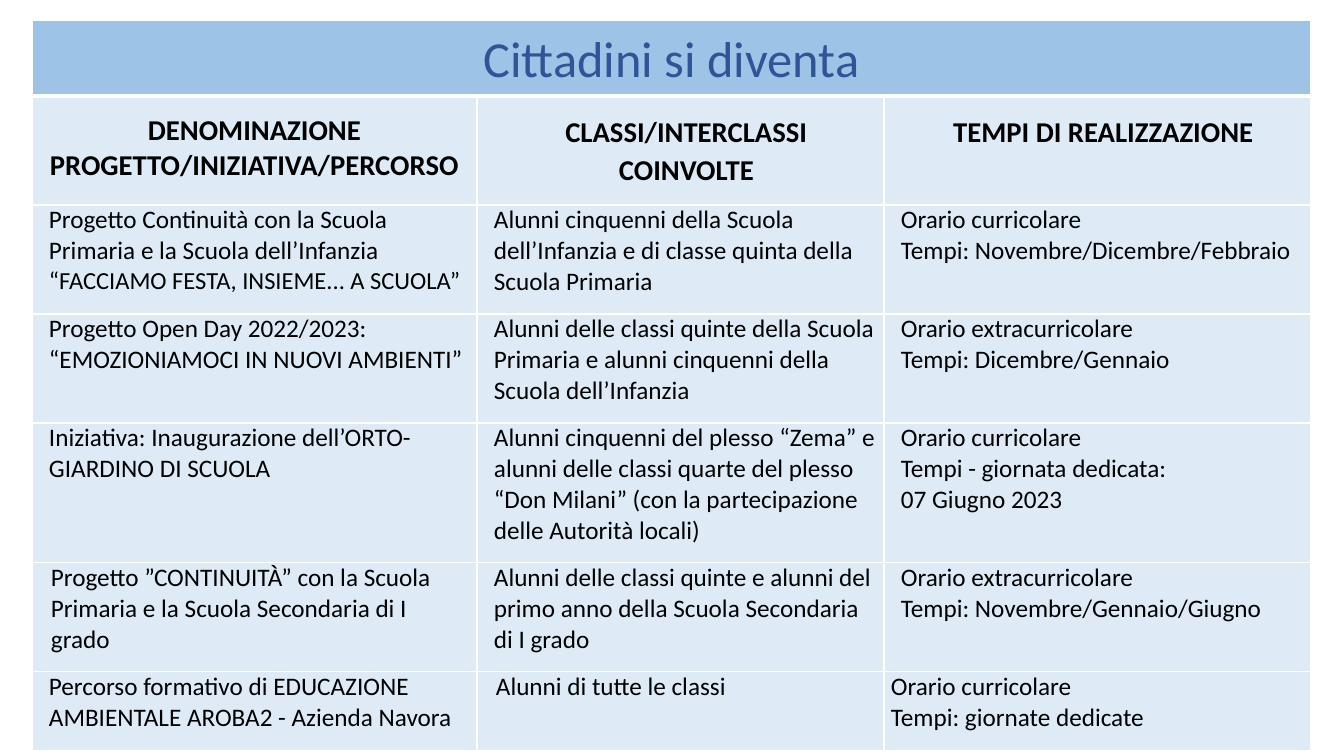
from dataclasses import dataclass
from typing import Any

from lxml import etree
from pptx import Presentation
from pptx.dml.color import RGBColor
from pptx.enum.text import MSO_ANCHOR, PP_ALIGN
from pptx.oxml.ns import qn
from pptx.util import Emu, Pt

CENTER = PP_ALIGN.CENTER
LEFT = PP_ALIGN.LEFT
TOP = MSO_ANCHOR.TOP
PX_PER_INCH = 100.8


@dataclass(frozen=True)
class Theme:
    font: str = "Calibri"
    title_fill: str = "9DC3E6"
    cell_fill: str = "DEEBF7"
    title_text: str = "2F5597"
    text: str = "000000"
    border: str = "FFFFFF"
    title_size: float = 36
    header_size: float = 20.5
    body_size: float = 18
    motto_size: float = 17.5
    border_width: float = 1
    title_rule: float = 3


THEME = Theme()


@dataclass(frozen=True)
class Span:
    text: str
    size: float = THEME.body_size
    bold: bool = False
    color: str = THEME.text


@dataclass(frozen=True)
class Para:
    spans: tuple[Span, ...]
    indent: int = 10
    align: Any = LEFT
    spacing: float = 1.0


@dataclass(frozen=True)
class CellText:
    paras: tuple[Para, ...]
    top: int = 0
    fill: str = THEME.cell_fill


def px(length: int) -> Emu:
    return Emu(round(length * 914400 / PX_PER_INCH))


def apply(target: Any, values: dict[str, Any]) -> None:
    for name, value in values.items():
        setattr(target, name, value)


def body(*lines: str, indent: int = 10) -> CellText:
    return CellText(tuple(Para((Span(line),), indent) for line in lines))


def header(*lines: str, indent: int = 12, spacing: float = 1.07) -> CellText:
    return CellText(
        tuple(
            Para((Span(line, THEME.header_size, True),), indent, CENTER, spacing)
            for line in lines
        ),
        top=17,
    )


def draw_borders(cell: Any, widths: dict[str, float]) -> None:
    properties = cell._tc.get_or_add_tcPr()
    for position, (side, width) in enumerate(widths.items()):
        line = etree.Element(qn(f"a:ln{side}"), w=str(Pt(width)))
        fill = etree.SubElement(line, qn("a:solidFill"))
        etree.SubElement(fill, qn("a:srgbClr"), val=THEME.border)
        properties.insert(position, line)


def draw_para(target: Any, para: Para) -> None:
    apply(
        target,
        {
            "alignment": para.align,
            "line_spacing": para.spacing,
            "space_before": Pt(0),
            "space_after": Pt(0),
        },
    )
    target._p.get_or_add_pPr().set("marL", str(px(para.indent)))
    for span in para.spans:
        run = target.add_run()
        run.text = span.text
        apply(
            run.font,
            {"name": THEME.font, "size": Pt(span.size), "bold": span.bold},
        )
        run.font.color.rgb = RGBColor.from_string(span.color)


def draw_cell(cell: Any, content: CellText) -> None:
    apply(
        cell,
        {
            "margin_left": px(7),
            "margin_right": px(7),
            "margin_top": px(content.top),
            "margin_bottom": px(0),
            "vertical_anchor": TOP,
        },
    )
    cell.fill.solid()
    cell.fill.fore_color.rgb = RGBColor.from_string(content.fill)
    frame = cell.text_frame
    for index, para in enumerate(content.paras):
        target = frame.add_paragraph() if index else frame.paragraphs[0]
        draw_para(target, para)


TITLE = CellText(
    (
        Para(
            (Span("Cittadini si diventa", THEME.title_size, False, THEME.title_text),),
            0,
            CENTER,
            1.07,
        ),
    ),
    top=5,
    fill=THEME.title_fill,
)

CONTINUITY = CellText(
    (
        Para(
            (
                Span("Progetto Continuità con la Scuola Primaria e la Scuola dell’Infanzia "),
                Span("“FACCIAMO FESTA, INSIEME... A SCUOLA”", THEME.motto_size),
            )
        ),
    )
)

ROWS = [
    [TITLE, CellText(()), CellText(())],
    [
        header("DENOMINAZIONE", "PROGETTO/INIZIATIVA/PERCORSO", indent=0, spacing=1.0),
        header("CLASSI/INTERCLASSI COINVOLTE"),
        header("TEMPI DI REALIZZAZIONE"),
    ],
    [
        CONTINUITY,
        body("Alunni cinquenni della Scuola dell’Infanzia e di classe quinta della Scuola Primaria"),
        body("Orario curricolare", "Tempi: Novembre/Dicembre/Febbraio"),
    ],
    [
        body("Progetto Open Day 2022/2023: “EMOZIONIAMOCI IN NUOVI AMBIENTI”"),
        body("Alunni delle classi quinte della Scuola Primaria e alunni cinquenni della Scuola dell’Infanzia"),
        body("Orario extracurricolare", "Tempi: Dicembre/Gennaio"),
    ],
    [
        body("Iniziativa: Inaugurazione dell’ORTO-GIARDINO DI SCUOLA"),
        body("Alunni cinquenni del plesso “Zema” e alunni delle classi quarte del plesso “Don Milani” (con la partecipazione delle Autorità locali)"),
        body("Orario curricolare", "Tempi - giornata dedicata:", "07 Giugno 2023"),
    ],
    [
        body("Progetto ”CONTINUITÀ” con la Scuola Primaria e la Scuola Secondaria di I grado", indent=12),
        body("Alunni delle classi quinte e alunni del primo anno della Scuola Secondaria di I grado"),
        body("Orario extracurricolare", "Tempi: Novembre/Gennaio/Giugno"),
    ],
    [
        body("Percorso formativo di EDUCAZIONE AMBIENTALE AROBA2 - Azienda Navora"),
        body("Alunni di tutte le classi", indent=12),
        body("Orario curricolare", "Tempi: giornate dedicate", indent=0),
    ],
]
COLUMN_WIDTHS = [445, 407, 427]
ROW_HEIGHTS = [76, 109, 109, 109, 140, 109, 79]


def draw_table(page: Any) -> None:
    table = page.shapes.add_table(
        len(ROWS), len(COLUMN_WIDTHS), px(32), px(20),
        px(sum(COLUMN_WIDTHS)), px(sum(ROW_HEIGHTS)),
    ).table
    apply(table, {"first_row": False, "horz_banding": False})
    for column, width in zip(table.columns, COLUMN_WIDTHS):
        column.width = px(width)
    for row, height in zip(table.rows, ROW_HEIGHTS):
        row.height = px(height)
    table.cell(0, 0).merge(table.cell(0, len(COLUMN_WIDTHS) - 1))
    thin, rule = THEME.border_width, THEME.title_rule
    for row_index, row in enumerate(ROWS):
        for column_index, content in enumerate(row):
            cell = table.cell(row_index, column_index)
            draw_cell(cell, content)
            above = rule if row_index == 1 else thin
            below = rule if row_index == 0 else thin
            draw_borders(cell, {"L": thin, "R": thin, "T": above, "B": below})


def main() -> None:
    deck = Presentation()
    apply(deck, {"slide_width": px(1344), "slide_height": px(756)})
    page = deck.slides.add_slide(deck.slide_layouts[6])
    draw_table(page)
    deck.save("out.pptx")


if __name__ == "__main__":
    main()
